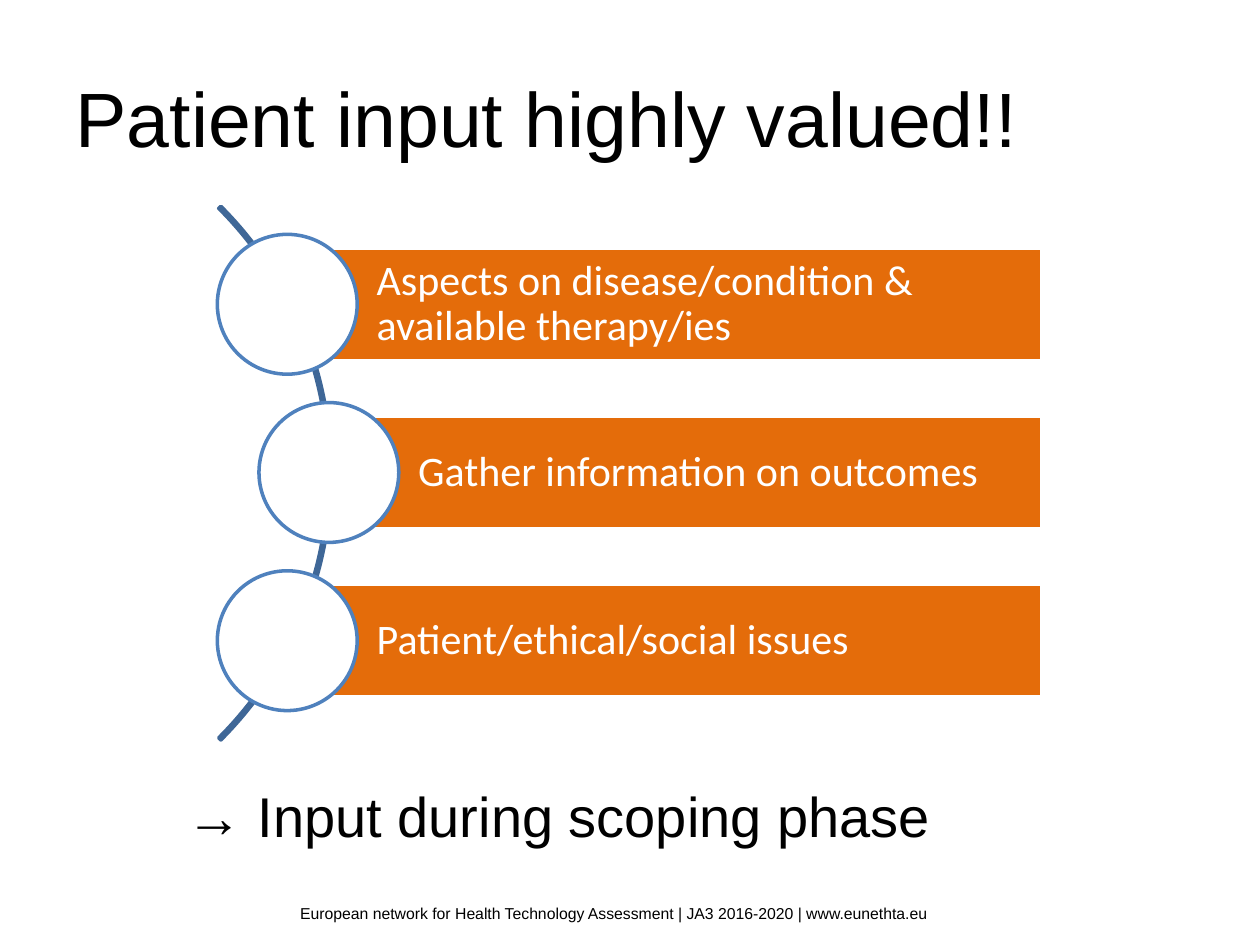
import pptx
import pptx.dml.color
import pptx.enum.shapes
import pptx.enum.text
import pptx.util

Inches = pptx.util.Inches
Pt = pptx.util.Pt
MSO_SHAPE = pptx.enum.shapes.MSO_SHAPE
ALIGN = pptx.enum.text.PP_ALIGN
ANCHOR = pptx.enum.text.MSO_ANCHOR

COLORS = {
    "text": "000000",
    "white": "FFFFFF",
    "bar": "E46C0A",
    "ring": "4F81BD",
    "arc": "3F6797",
}
TOPICS = [
    ("Aspects on disease/condition & available therapy/ies", 2.28),
    ("Gather information on outcomes", 2.61),
    ("Patient/ethical/social issues", 2.28),
]
BAR_TOP, BAR_PITCH, BAR_HEIGHT, BAR_RIGHT = 1.97, 1.335, 0.89, 8.27
RING_SIZE = 1.11
ARC_CENTER_X, ARC_CENTER_Y, ARC_SIZE = -0.365, 3.755, 5.99


def rgb(name):
    return pptx.dml.color.RGBColor.from_string(COLORS[name])


def set_text(sp, text, size, font="Arial", color="text", align=ALIGN.LEFT,
             anchor=ANCHOR.TOP, margins=(0.1, 0.05, 0.1, 0.05), line_spacing=None):
    tf = sp.text_frame
    tf.word_wrap = True
    tf.auto_size = pptx.enum.text.MSO_AUTO_SIZE.NONE
    tf.vertical_anchor = anchor
    tf.margin_left, tf.margin_top, tf.margin_right, tf.margin_bottom = map(Inches, margins)
    p = tf.paragraphs[0]
    p.alignment = align
    p.line_spacing = line_spacing
    r = p.add_run()
    r.text = text
    r.font.name = font
    r.font.size = Pt(size)
    r.font.color.rgb = rgb(color)


def add_shape(slide, kind, left, top, width, height, line, fill=None):
    sp = slide.shapes.add_shape(kind, Inches(left), Inches(top), Inches(width), Inches(height))
    sp.shadow.inherit = False
    if fill:
        sp.fill.solid()
        sp.fill.fore_color.rgb = rgb(fill)
    else:
        sp.fill.background()
    sp.line.color.rgb = rgb(line)
    sp.line.width = Pt(2)
    return sp


def add_text(slide, text, left, top, width, height, **text_format):
    sp = slide.shapes.add_textbox(Inches(left), Inches(top), Inches(width), Inches(height))
    set_text(sp, text, **text_format)


def add_title(slide, text):
    sp = slide.shapes.title
    sp.left, sp.top, sp.width, sp.height = map(Inches, (0.5, 0.3, 9, 1.25))
    set_text(sp, text, size=44, anchor=ANCHOR.MIDDLE)


def add_arc(slide):
    """Thin arc from -45 to 45 degrees that links the rings."""
    half = ARC_SIZE / 2
    sp = add_shape(slide, MSO_SHAPE.BLOCK_ARC, ARC_CENTER_X - half, ARC_CENTER_Y - half,
                   ARC_SIZE, ARC_SIZE, line="arc")
    # Angles are in units of 100000/60000 degrees.
    for i, value in enumerate((189, 27, 0.004)):
        sp.adjustments[i] = value


def add_topic(slide, text, left, top):
    """Bar with a ring centred on its left edge."""
    bar = add_shape(slide, MSO_SHAPE.RECTANGLE, left, top, BAR_RIGHT - left, BAR_HEIGHT,
                    line="white", fill="bar")
    set_text(bar, text, size=24, font="Calibri", color="white", anchor=ANCHOR.MIDDLE,
             margins=(0.71, 0.07, 0.07, 0.07), line_spacing=0.9)
    add_shape(slide, MSO_SHAPE.OVAL, left - RING_SIZE / 2, top + (BAR_HEIGHT - RING_SIZE) / 2,
              RING_SIZE, RING_SIZE, line="ring", fill="white")


def main():
    prs = pptx.Presentation()
    prs.slide_width, prs.slide_height = Inches(10), Inches(7.5)
    slide = prs.slides.add_slide(prs.slide_layouts[5])
    add_title(slide, "Patient input highly valued!!")
    add_arc(slide)
    for i, (text, left) in enumerate(TOPICS):
        add_topic(slide, text, left, BAR_TOP + i * BAR_PITCH)
    add_text(slide, "→ Input during scoping phase", 1.38, 6.15, 6.46, 0.98, size=32)
    add_text(slide, "European network for Health Technology Assessment | JA3 2016-2020 | www.eunethta.eu",
             1.93, 7.12, 5.88, 0.25, size=9, align=ALIGN.CENTER, anchor=ANCHOR.MIDDLE)
    prs.save("out.pptx")


if __name__ == "__main__":
    main()
